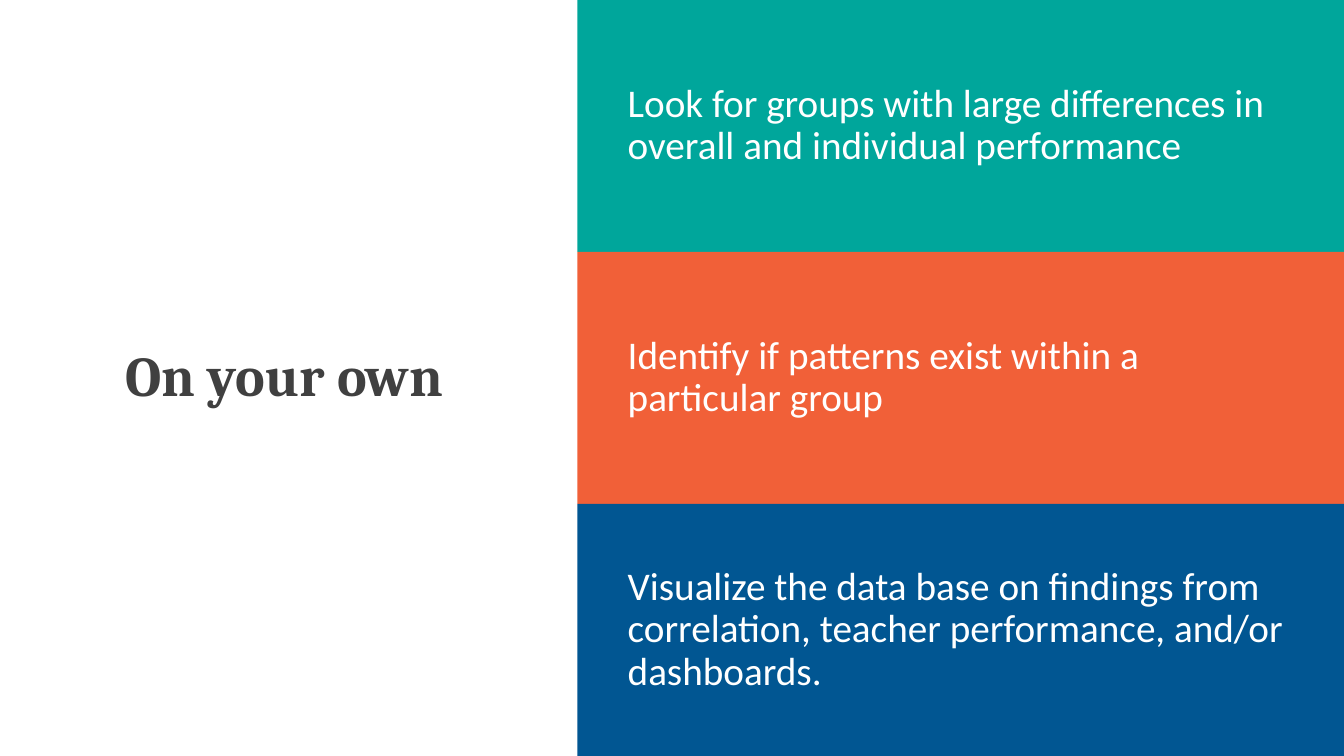
import pptx
import pptx.util
import pptx.dml.color
import pptx.enum.shapes
import pptx.enum.text

Cm, Pt = pptx.util.Cm, pptx.util.Pt
RGBColor = pptx.dml.color.RGBColor
PP_ALIGN = pptx.enum.text.PP_ALIGN

WHITE = RGBColor(0xFF, 0xFF, 0xFF)
GREY = RGBColor(0x40, 0x40, 0x40)
TEAL = RGBColor(0x00, 0xA6, 0x9B)
ORANGE = RGBColor(0xF1, 0x60, 0x38)
BLUE = RGBColor(0x01, 0x56, 0x92)

TITLE_FONT = {"name": "Cambria", "size": Pt(40), "bold": True}
STEP_FONT = {"name": "Calibri", "size": Pt(28), "bold": False}

STEPS = [
    (TEAL, "Look for groups with large differences in overall and individual performance"),
    (ORANGE, "Identify if patterns exist within a particular group"),
    (BLUE, "Visualize the data base on findings from correlation, "
           "teacher performance, and/or dashboards."),
]


def write(sp, text, font, color, align, side_inset):
    """Fill a shape with one vertically centred paragraph."""
    tf = sp.text_frame
    frame = {"word_wrap": True,
             "vertical_anchor": pptx.enum.text.MSO_ANCHOR.MIDDLE,
             "margin_left": side_inset, "margin_right": side_inset,
             "margin_top": Cm(0.13), "margin_bottom": Cm(0.13)}
    for name, value in frame.items():
        setattr(tf, name, value)
    p = tf.paragraphs[0]
    p.alignment = align
    p.line_spacing = 0.9
    r = p.add_run()
    r.text = text
    for name, value in font.items():
        setattr(r.font, name, value)
    r.font.color.rgb = color


def add_title(s, left, top, width, height):
    sp = s.shapes.add_textbox(left, top, width, height)
    write(sp, "On your own", TITLE_FONT, GREY, PP_ALIGN.CENTER, Cm(0.25))


def add_steps(s, left, top, width, height):
    """Stack equal coloured bands, one for each step."""
    band = height // len(STEPS)
    for i, (fill, text) in enumerate(STEPS):
        sp = s.shapes.add_shape(pptx.enum.shapes.MSO_SHAPE.RECTANGLE,
                                left, top + i * band, width, band)
        sp.shadow.inherit = False
        sp.fill.solid()
        sp.fill.fore_color.rgb = fill
        sp.line.fill.background()
        write(sp, text, STEP_FONT, WHITE, PP_ALIGN.LEFT, Cm(1.27))


def main():
    prs = pptx.Presentation()
    prs.slide_width, prs.slide_height = Cm(33.87), Cm(19.05)
    s = prs.slides.add_slide(prs.slide_layouts[6])

    # Heading on the left
    add_title(s, Cm(1.6), Cm(2.34), Cm(11.13), Cm(14.38))

    # Steps down the right side
    left = Cm(14.55)
    add_steps(s, left, 0, prs.slide_width - left, prs.slide_height)

    prs.save("out.pptx")


if __name__ == "__main__":
    main()
